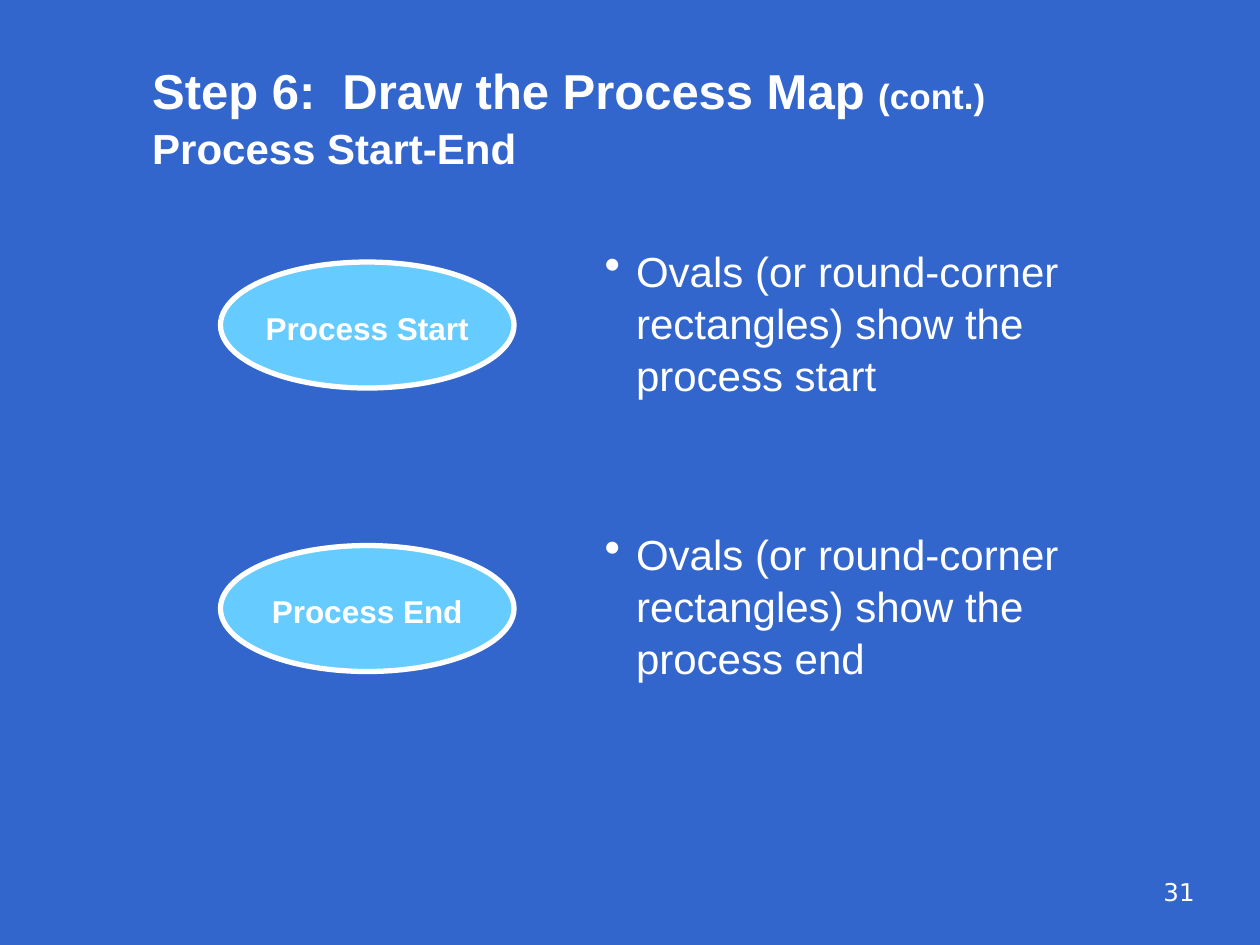
from lxml.etree import SubElement
from pptx import Presentation
from pptx.dml.color import RGBColor
from pptx.enum.shapes import MSO_SHAPE
from pptx.enum.text import MSO_ANCHOR, PP_ALIGN
from pptx.oxml.ns import qn
from pptx.util import Inches, Pt

BACKGROUND, OVAL_FILL, WHITE = "3366CC", "66CCFF", "FFFFFF"
LINE_SPACING = 1.04

TITLE_LINES = [
    [("Step 6:  Draw the Process Map ", 28), ("(cont.)", 20), (" ", 32)],
    [("Process Start-End", 24)],
]
OVALS = ["Process Start", "Process End"]
BULLETS = [
    "Ovals (or round-corner rectangles) show the process start",
    "Ovals (or round-corner rectangles) show the process end",
]
PAGE_NUMBER = "31"

OVAL_LEFT, OVAL_TOP, OVAL_WIDTH, OVAL_HEIGHT = 1.75, 2.08, 2.33, 1
OVAL_PITCH = 2.25


def color(value):
    return RGBColor.from_string(value)


def add_run(paragraph, text, size, bold=False, name="Arial"):
    run = paragraph.add_run()
    run.text = text
    formats = {"size": Pt(size), "bold": bold, "name": name}
    for attribute, value in formats.items():
        setattr(run.font, attribute, value)
    run.font.color.rgb = color(WHITE)


def add_text_frame(slide, left, top, width, height, anchor=MSO_ANCHOR.TOP):
    box = slide.shapes.add_textbox(*map(Inches, (left, top, width, height)))
    box.text_frame.word_wrap = True
    box.text_frame.vertical_anchor = anchor
    return box.text_frame


def add_bullet(paragraph):
    properties = paragraph._p.get_or_add_pPr()
    properties.set("marL", str(Inches(0.25)))
    properties.set("indent", str(-Inches(0.25)))
    bullet_color = SubElement(properties, qn("a:buClr"))
    SubElement(bullet_color, qn("a:srgbClr"), val=WHITE)
    SubElement(properties, qn("a:buSzPct"), val="110000")
    SubElement(properties, qn("a:buChar"), char="•")


def add_title(slide):
    frame = add_text_frame(slide, 1.11, 0.17, 8.5, 1.25, MSO_ANCHOR.BOTTOM)
    paragraph = frame.paragraphs[0]
    paragraph.line_spacing = LINE_SPACING
    for index, line in enumerate(TITLE_LINES):
        if index:
            paragraph.add_line_break()
        for text, size in line:
            add_run(paragraph, text, size, bold=True)


def add_oval(slide, label, top):
    oval = slide.shapes.add_shape(
        MSO_SHAPE.OVAL, *map(Inches, (OVAL_LEFT, top, OVAL_WIDTH, OVAL_HEIGHT)))
    oval.shadow.inherit = False
    oval.fill.solid()
    oval.fill.fore_color.rgb = color(OVAL_FILL)
    oval.line.color.rgb = color(WHITE)
    oval.line.width = Pt(3)
    frame = oval.text_frame
    formats = {"margin_left": 0, "margin_right": 0, "margin_top": Inches(0.04),
               "margin_bottom": 0, "vertical_anchor": MSO_ANCHOR.MIDDLE}
    for attribute, value in formats.items():
        setattr(frame, attribute, value)
    frame.paragraphs[0].alignment = PP_ALIGN.CENTER
    add_run(frame.paragraphs[0], label, 18, bold=True)


def add_bullets(slide):
    frame = add_text_frame(slide, 4.7, 1.88, 4.17, 3.68)
    for index, text in enumerate(BULLETS):
        paragraph = frame.add_paragraph() if index else frame.paragraphs[0]
        add_bullet(paragraph)
        paragraph.line_spacing = LINE_SPACING
        if index:
            paragraph.space_before = Pt(72)
        add_run(paragraph, text, 24)


def add_page_number(slide):
    paragraph = add_text_frame(slide, 7.5, 6.91, 2.08, 0.5).paragraphs[0]
    paragraph.alignment = PP_ALIGN.RIGHT
    add_run(paragraph, PAGE_NUMBER, 14, name="DejaVu Sans")


def main():
    presentation = Presentation()
    presentation.slide_width, presentation.slide_height = Inches(10), Inches(7.5)
    slide = presentation.slides.add_slide(presentation.slide_layouts[6])
    slide.background.fill.solid()
    slide.background.fill.fore_color.rgb = color(BACKGROUND)
    add_title(slide)
    for row, label in enumerate(OVALS):
        add_oval(slide, label, OVAL_TOP + row * OVAL_PITCH)
    add_bullets(slide)
    add_page_number(slide)
    presentation.save("out.pptx")


if __name__ == "__main__":
    main()
